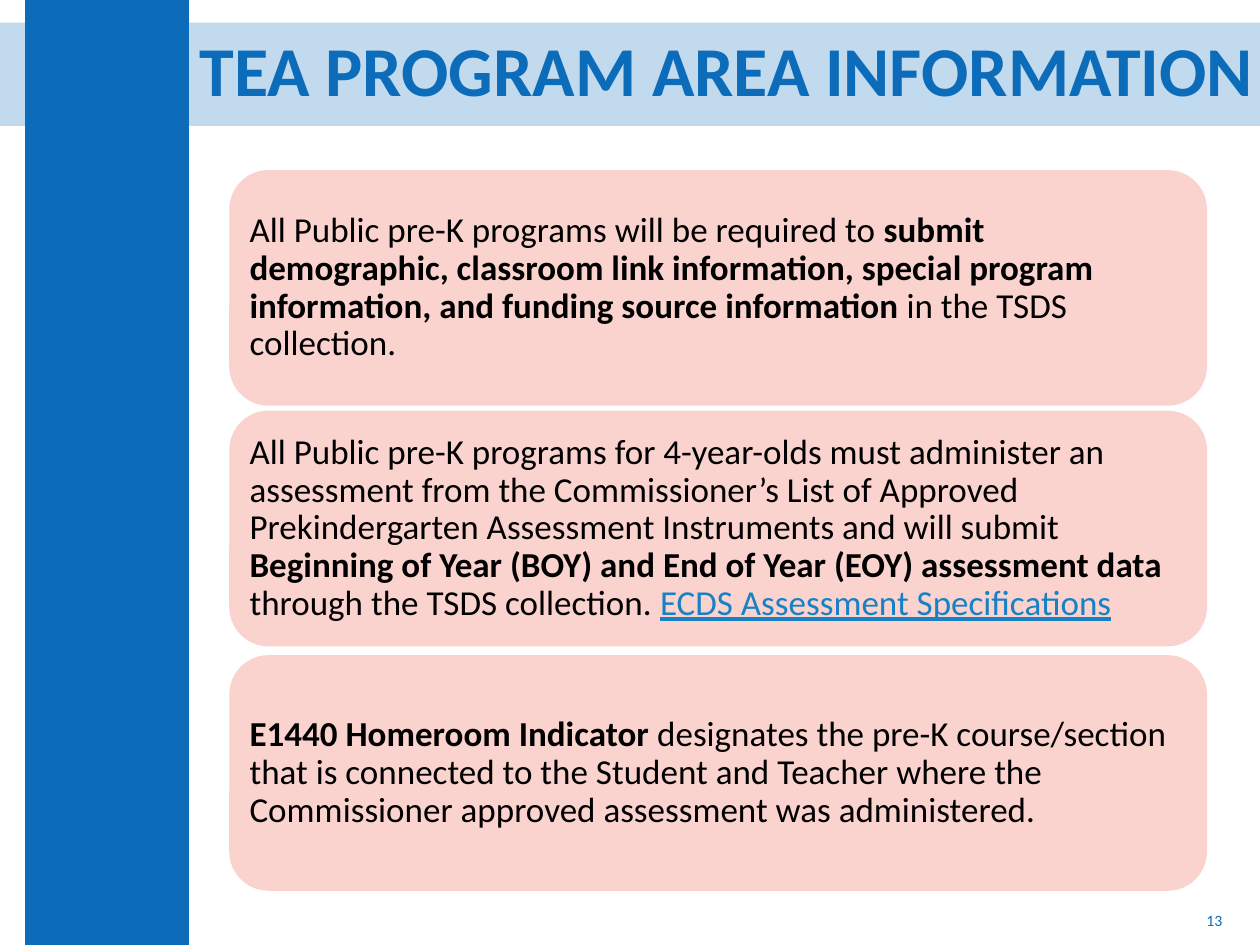
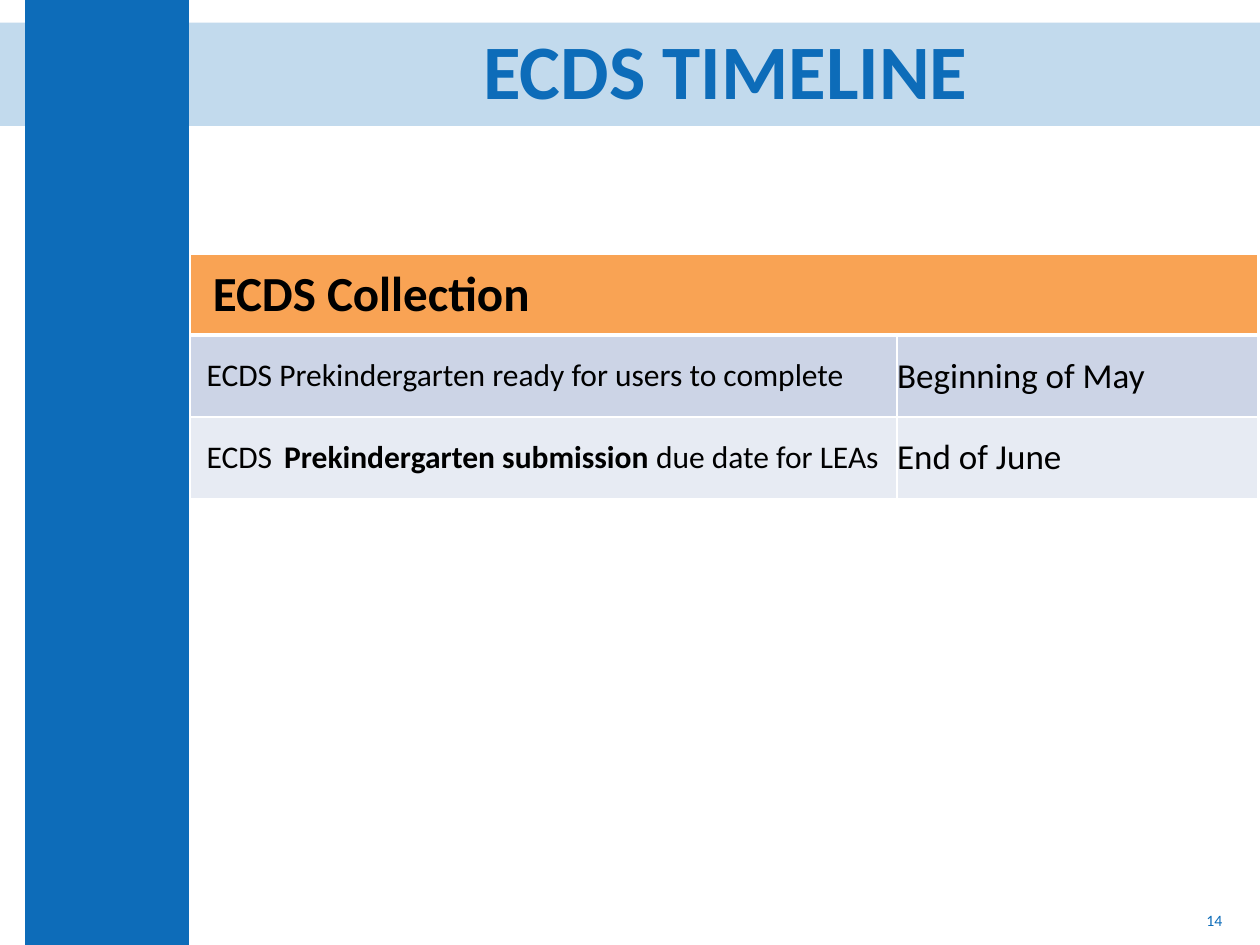
from dataclasses import dataclass
from typing import Any

from lxml import etree
from pptx import Presentation
from pptx.dml.color import RGBColor
from pptx.enum.shapes import MSO_SHAPE
from pptx.enum.text import MSO_ANCHOR, MSO_AUTO_SIZE, PP_ALIGN
from pptx.oxml.ns import qn
from pptx.util import Inches, Pt

RECTANGLE = MSO_SHAPE.RECTANGLE
ROUNDED = MSO_SHAPE.ROUNDED_RECTANGLE
MIDDLE = MSO_ANCHOR.MIDDLE
NO_AUTOFIT = MSO_AUTO_SIZE.NONE
LEFT, CENTER, RIGHT = PP_ALIGN.LEFT, PP_ALIGN.CENTER, PP_ALIGN.RIGHT

BLUE = RGBColor(0x0D, 0x6C, 0xB9)
LINK_BLUE = RGBColor(0x16, 0x82, 0xC5)
PINK = RGBColor(0xFA, 0xD2, 0xCE)
ORANGE = RGBColor(0xF9, 0xA3, 0x54)
ROW_DARK = RGBColor(0xCC, 0xD4, 0xE6)
ROW_LIGHT = RGBColor(0xE7, 0xEB, 0xF3)
WHITE = RGBColor(0xFF, 0xFF, 0xFF)
BLACK = RGBColor(0x00, 0x00, 0x00)

FONT = "Calibri"
BAND_TOP, BAND_HEIGHT = Inches(0.18), Inches(0.82)
CARD_LEFT, CARD_WIDTH, CARD_HEIGHT = Inches(1.82), Inches(7.76), Inches(1.87)
SIDES = ("left", "right", "top", "bottom")


@dataclass(frozen=True)
class Span:
    text: str
    size: float = 20
    bold: bool = False
    color: RGBColor = BLACK
    underline: bool = False


@dataclass(frozen=True)
class Heading:
    text: str
    left: float
    width: float
    size: float
    page: str


@dataclass(frozen=True)
class Card:
    top: float
    spans: tuple[Span, ...]


@dataclass(frozen=True)
class TimelineCell:
    spans: tuple[Span, ...]
    fill: RGBColor
    indent: float = 0
    top_line: float = 1
    bottom_line: float = 1


PROGRAM_HEADING = Heading("TEA PROGRAM AREA INFORMATION", 1.44, 8.65, 40, "13")
TIMELINE_HEADING = Heading("ECDS TIMELINE", 1.81, 7.9, 44, "14")

REQUIREMENTS = (
    Card(1.35, (
        Span("All Public pre-K programs will be required to "),
        Span("submit demographic, classroom link information, special program "
             "information, and funding source information ", bold=True),
        Span("in the TSDS collection."),
    )),
    Card(3.26, (
        Span("All Public pre-K programs for 4-year-olds must administer an "
             "assessment from the Commissioner’s List of Approved "
             "Prekindergarten Assessment Instruments and will submit "),
        Span("Beginning of Year (BOY) and End of Year (EOY) assessment data", bold=True),
        Span(" through the TSDS collection. "),
        Span("ECDS Assessment Specifications", color=LINK_BLUE, underline=True),
    )),
    Card(5.2, (
        Span("E1440 Homeroom Indicator ", bold=True),
        Span("designates the pre-K course/section that is connected to the "
             "Student and Teacher where the Commissioner approved assessment "
             "was administered."),
    )),
)

COLUMN_WIDTHS = (5.61, 2.86)
ROW_HEIGHTS = (0.64, 0.65, 0.65)
TIMELINE = (
    (
        TimelineCell((Span("ECDS Collection", 28, True),), ORANGE, 0.18, bottom_line=3),
        TimelineCell((), ORANGE, bottom_line=3),
    ),
    (
        TimelineCell((Span("ECDS Prekindergarten ready for users to complete", 18),),
                     ROW_DARK, 0.13, top_line=3),
        TimelineCell((Span("Beginning of May"),), ROW_DARK, top_line=3),
    ),
    (
        TimelineCell((
            Span("ECDS ", 18),
            Span(" ", 12, True),
            Span("Prekindergarten submission ", 18, True),
            Span("due date for LEAs", 18),
        ), ROW_LIGHT, 0.13),
        TimelineCell((Span("End of June"),), ROW_LIGHT),
    ),
)


def apply_format(target: Any, values: dict[str, Any]) -> None:
    for attribute, value in values.items():
        setattr(target, attribute, value)


def margins(size: float) -> dict[str, Any]:
    return {f"margin_{side}": Inches(size) for side in SIDES}


def write(frame: Any, spans: tuple[Span, ...], align: Any = LEFT,
          line_spacing: float = 1.0) -> None:
    paragraph = frame.paragraphs[0]
    apply_format(paragraph, {"alignment": align, "line_spacing": line_spacing})
    for span in spans:
        run = paragraph.add_run()
        run.text = span.text
        apply_format(run.font, {"name": FONT, "size": Pt(span.size), "bold": span.bold,
                                "underline": span.underline})
        run.font.color.rgb = span.color


def add_panel(slide: Any, preset: Any, left: int, top: int, width: int, height: int,
              color: RGBColor) -> Any:
    panel = slide.shapes.add_shape(preset, left, top, width, height)
    panel.shadow.inherit = False
    panel.fill.solid()
    panel.fill.fore_color.rgb = color
    panel.line.fill.background()
    return panel


def add_frame(slide: Any) -> None:
    band = add_panel(slide, RECTANGLE, 0, BAND_TOP, Inches(10), BAND_HEIGHT, BLUE)
    band_color = band.fill._xPr.find(qn("a:solidFill"))[0]
    etree.SubElement(band_color, qn("a:alpha"), val="25000")
    sidebar = add_panel(slide, RECTANGLE, Inches(0.2), 0, Inches(1.3), Inches(7.5), BLUE)
    for position, panel in enumerate((band, sidebar), start=2):
        slide.shapes._spTree.insert(position, panel._element)


def add_page(deck: Any, heading: Heading) -> Any:
    slide = deck.slides.add_slide(deck.slide_layouts[5])
    add_frame(slide)
    title = slide.shapes.title
    apply_format(title, {"left": Inches(heading.left), "top": BAND_TOP,
                         "width": Inches(heading.width), "height": BAND_HEIGHT})
    apply_format(title.text_frame, {"vertical_anchor": MIDDLE, "word_wrap": True,
                                    "auto_size": NO_AUTOFIT})
    write(title.text_frame, (Span(heading.text, heading.size, True, BLUE),), CENTER, 0.9)

    page_number = slide.shapes.add_textbox(Inches(7.55), Inches(7.1), Inches(2.25), Inches(0.4))
    apply_format(page_number.text_frame, {"vertical_anchor": MIDDLE, "word_wrap": True})
    write(page_number.text_frame, (Span(heading.page, 9, color=BLUE),), RIGHT)
    return slide


def add_card(slide: Any, card: Card) -> None:
    panel = add_panel(slide, ROUNDED, CARD_LEFT, Inches(card.top), CARD_WIDTH, CARD_HEIGHT, PINK)
    apply_format(panel.text_frame, {"vertical_anchor": MIDDLE, "word_wrap": True,
                                    **margins(0.07)})
    write(panel.text_frame, card.spans, line_spacing=0.9)


def set_borders(cell: Any, widths: dict[str, float]) -> None:
    properties = cell._tc.get_or_add_tcPr()
    for position, (tag, width) in enumerate(widths.items()):
        line = etree.Element(qn(f"a:{tag}"), w=str(Pt(width)))
        fill = etree.SubElement(line, qn("a:solidFill"))
        etree.SubElement(fill, qn("a:srgbClr"), val=str(WHITE))
        properties.insert(position, line)


def add_timeline(slide: Any) -> None:
    table = slide.shapes.add_table(
        len(TIMELINE), len(COLUMN_WIDTHS), Inches(1.51), Inches(2.02),
        Inches(sum(COLUMN_WIDTHS)), Inches(sum(ROW_HEIGHTS))).table
    for column, width in zip(table.columns, COLUMN_WIDTHS):
        column.width = Inches(width)
    for row, height in zip(table.rows, ROW_HEIGHTS):
        row.height = Inches(height)
    table.cell(0, 0).merge(table.cell(0, 1))
    for row, entries in zip(table.rows, TIMELINE):
        for cell, entry in zip(row.cells, entries):
            apply_format(cell, {"vertical_anchor": MIDDLE, **margins(0),
                                "margin_left": Inches(entry.indent)})
            cell.fill.solid()
            cell.fill.fore_color.rgb = entry.fill
            set_borders(cell, {"lnL": 1, "lnR": 1, "lnT": entry.top_line,
                               "lnB": entry.bottom_line})
            write(cell.text_frame, entry.spans)


def main() -> None:
    deck = Presentation()
    apply_format(deck, {"slide_width": Inches(10), "slide_height": Inches(7.5)})
    program_page = add_page(deck, PROGRAM_HEADING)
    for card in REQUIREMENTS:
        add_card(program_page, card)
    add_timeline(add_page(deck, TIMELINE_HEADING))
    deck.save("out.pptx")


if __name__ == "__main__":
    main()
